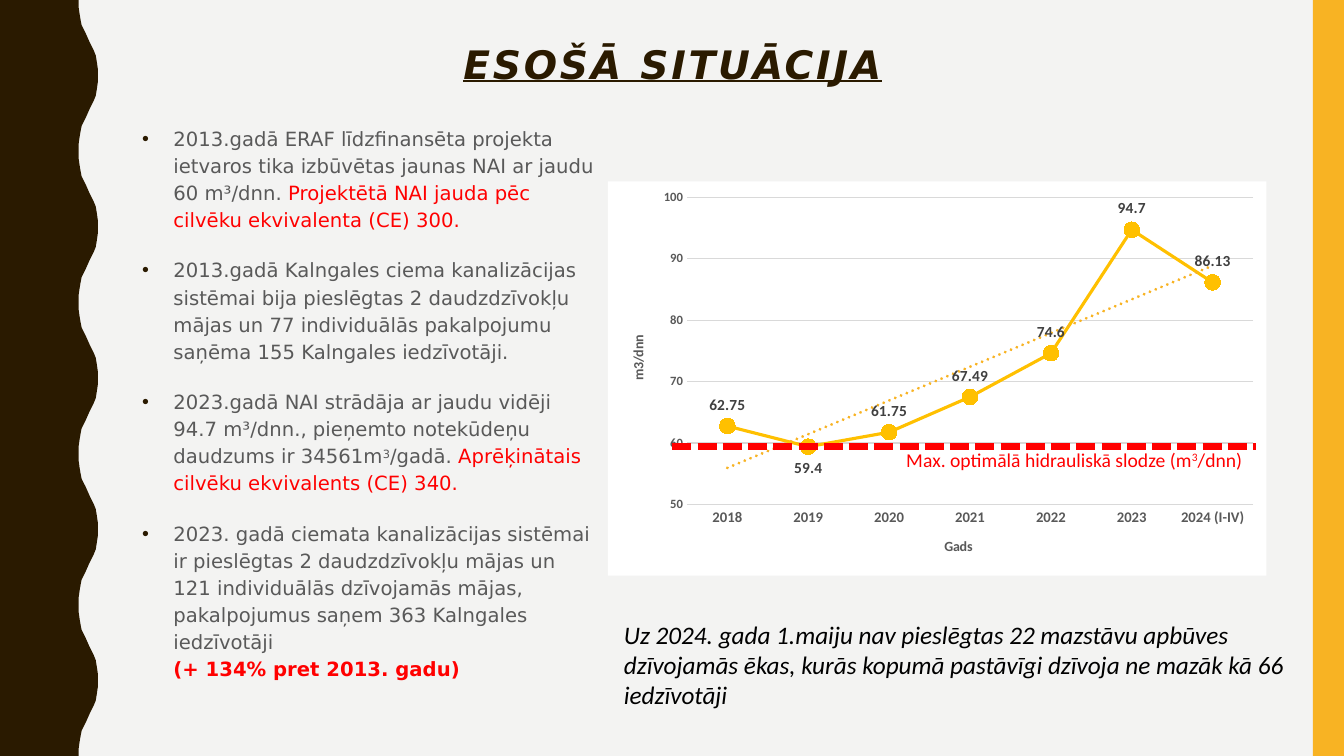
from dataclasses import dataclass

from lxml import etree
from pptx import Presentation
from pptx import util as u
from pptx.chart.data import CategoryChartData
from pptx.dml.color import RGBColor
from pptx.enum import chart as charts, dml, shapes, text
from pptx.oxml import parse_xml
from pptx.oxml.ns import nsdecls, qn

BROWN = RGBColor(0x2A, 0x1A, 0x00)
AMBER = RGBColor(0xF8, 0xB3, 0x23)
GOLD = RGBColor(0xFF, 0xC0, 0x00)
RED = RGBColor(0xFF, 0x00, 0x00)
GREY = RGBColor(0x59, 0x59, 0x59)
DARK = RGBColor(0x40, 0x40, 0x40)
PALE = RGBColor(0xD9, 0xD9, 0xD9)
PAPER = RGBColor(0xF3, 0xF3, 0xF2)
BLACK = RGBColor(0x00, 0x00, 0x00)

SANS = "DejaVu Sans"
CALIBRI = "Calibri"


@dataclass
class Span:
    words: str
    color: RGBColor = GREY
    bold: bool = False
    raised: bool = False
    new_line: bool = False


BULLETS = [
    [Span("2013.gadā ERAF līdzfinansēta projekta ietvaros tika izbūvētas jaunas NAI ar jaudu 60 m³/dnn. "),
     Span("Projektētā NAI jauda pēc cilvēku ekvivalenta (CE) 300.", RED)],
    [Span("2013.gadā Kalngales ciema kanalizācijas sistēmai bija pieslēgtas 2 daudzdzīvokļu mājas "
          "un 77 individuālās pakalpojumu saņēma 155 Kalngales iedzīvotāji.")],
    [Span("2023.gadā NAI strādāja ar jaudu vidēji 94.7 m³/dnn., pieņemto notekūdeņu daudzums ir 34561m"),
     Span("3", raised=True), Span("/gadā. "),
     Span("Aprēķinātais cilvēku ekvivalents (CE) 340.", RED)],
    [Span("2023. gadā ciemata kanalizācijas sistēmai ir pieslēgtas 2 daudzdzīvokļu mājas un "
          "121 individuālās dzīvojamās mājas, pakalpojumus saņem 363 Kalngales iedzīvotāji "),
     Span("(+ 134% pret 2013. gadu)", RED, bold=True, new_line=True)],
]
LIMIT_LABEL = [Span("Max. optimālā hidrauliskā slodze (m", RED), Span("3", RED, raised=True), Span("/dnn)", RED)]
FOOTNOTE = [Span("Uz 2024. gada 1.maiju nav pieslēgtas 22 mazstāvu apbūves dzīvojamās ēkas, "
                 "kurās kopumā pastāvīgi dzīvoja ne mazāk kā 66 iedzīvotāji", BLACK)]

FLOW = {"2018": 62.75, "2019": 59.4, "2020": 61.75, "2021": 67.49,
        "2022": 74.6, "2023": 94.7, "2024 (I-IV)": 86.13}

# Half a wave of the left edge, as (x, y); the other half mirrors it
WAVE_PERIOD, WAVE_COUNT = 1.5, 5
HALF_WAVE = [(0.78, 0), (0.78, 0.07), (0.79, 0.14), (0.8, 0.2), (0.81, 0.25), (0.85, 0.33), (0.89, 0.42),
             (0.93, 0.5), (0.95, 0.55), (0.96, 0.61), (0.97, 0.68), (0.97, 0.75)]


def place(box, left: float, top: float, width: float, height: float) -> None:
    box.left, box.top = u.Inches(left), u.Inches(top)
    box.width, box.height = u.Inches(width), u.Inches(height)


def write(para, spans: list[Span], name: str, size: float, italic: bool = False) -> None:
    para.font.name, para.font.size, para.font.italic = name, u.Pt(size), italic
    for span in spans:
        if span.new_line:
            para.add_line_break()
        run = para.add_run()
        run.text = span.words
        run.font.color.rgb = span.color
        if span.bold:
            run.font.bold = True
        if span.raised:
            run.font._element.set("baseline", "30000")


def add_bullet(para) -> None:
    props = para._p.get_or_add_pPr()
    props.set("marL", str(u.Inches(0.56)))
    props.set("indent", str(u.Inches(-0.31)))
    color = parse_xml(f'<a:buClr {nsdecls("a")}><a:srgbClr val="{BROWN}"/></a:buClr>')
    mark = parse_xml(f'<a:buChar {nsdecls("a")} char="•"/>')
    default_font = props.find(qn("a:defRPr"))
    default_font.addprevious(color)
    default_font.addprevious(mark)


def add_text(page, spans: list[Span], size: float, area: tuple, italic: bool = False) -> None:
    box = page.shapes.add_textbox(*(u.Inches(length) for length in area))
    box.text_frame.word_wrap = True
    write(box.text_frame.paragraphs[0], spans, CALIBRI, size, italic)


def send_back(page, shape, color: RGBColor) -> None:
    shape.shadow.inherit = False
    shape.fill.solid()
    shape.fill.fore_color.rgb = color
    shape.line.fill.background()
    page.shapes._spTree.insert(2, shape._element)


def style_font(font, size: float, color: RGBColor) -> None:
    font.name, font.size, font.bold = CALIBRI, u.Pt(size), True
    font.color.rgb = color


def style_axis(axis, title: str, size: float) -> None:
    axis.major_tick_mark = axis.minor_tick_mark = charts.XL_TICK_MARK.NONE
    style_font(axis.tick_labels.font, size, GREY)
    para = axis.axis_title.text_frame.paragraphs[0]
    para.text = title
    style_font(para.runs[0].font, 10, GREY)


def add_flow_chart(page) -> None:
    data = CategoryChartData()
    data.categories = list(FLOW)
    data.add_series("Series 1", list(FLOW.values()))
    area = [u.Inches(length) for length in (6.03, 1.8, 6.53, 3.91)]
    chart = page.shapes.add_chart(charts.XL_CHART_TYPE.LINE_MARKERS, *area, data).chart
    chart.has_legend = chart.has_title = False
    chart.font.name, chart.font.size = CALIBRI, u.Pt(10)

    # Axes
    years, volumes = chart.category_axis, chart.value_axis
    style_axis(years, "Gads", 10.5)
    style_axis(volumes, "m3/dnn", 9)
    volumes.minimum_scale, volumes.maximum_scale, volumes.major_unit = 50, 100, 10
    volumes.format.line.fill.background()
    for line in (years.format.line, volumes.major_gridlines.format.line):
        line.color.rgb, line.width = PALE, u.Pt(0.75)

    # Series, markers and labels
    plot = chart.plots[0]
    plot.vary_by_categories = False
    series = plot.series[0]
    series.smooth = False
    series.format.line.color.rgb, series.format.line.width = GOLD, u.Pt(2.25)
    marker = series.marker
    marker.style, marker.size = charts.XL_MARKER_STYLE.CIRCLE, 11
    marker.format.fill.solid()
    marker.format.fill.fore_color.rgb = marker.format.line.color.rgb = GOLD
    labels = series.data_labels
    labels.show_value, labels.position = True, charts.XL_LABEL_POSITION.ABOVE
    style_font(labels.font, 11, DARK)
    lowest = series.points[1].data_label
    style_font(lowest.font, 11, DARK)
    lowest.position = charts.XL_LABEL_POSITION.BELOW

    # Trend line, plot area and white background
    series._element.find(qn("c:cat")).addprevious(parse_xml(
        f'<c:trendline {nsdecls("c", "a")}><c:spPr><a:ln w="{u.Pt(2.25)}" cap="rnd"><a:solidFill>'
        f'<a:srgbClr val="{AMBER}"/></a:solidFill><a:prstDash val="sysDot"/></a:ln></c:spPr>'
        '<c:trendlineType val="linear"/><c:dispRSqr val="0"/><c:dispEq val="0"/></c:trendline>'))
    plot_area = chart._chartSpace.chart.plotArea
    for old in plot_area.findall(qn("c:layout")):
        plot_area.remove(old)
    layout = parse_xml(f'<c:layout {nsdecls("c")}><c:manualLayout><c:layoutTarget val="inner"/>'
                       '<c:xMode val="edge"/><c:yMode val="edge"/></c:manualLayout></c:layout>')
    for side, share in {"x": 0.12, "y": 0.04, "w": 0.86, "h": 0.78}.items():
        etree.SubElement(layout[0], qn(f"c:{side}")).set("val", str(share))
    plot_area.insert(0, layout)
    chart._chartSpace.chart.addnext(parse_xml(
        f'<c:spPr {nsdecls("c", "a")}><a:solidFill><a:srgbClr val="FFFFFF"/></a:solidFill>'
        '<a:ln><a:noFill/></a:ln></c:spPr>'))


def main() -> None:
    deck = Presentation()
    deck.slide_width, deck.slide_height = u.Inches(13.33), u.Inches(7.5)
    page = deck.slides.add_slide(deck.slide_layouts[1])
    page.background.fill.solid()
    page.background.fill.fore_color.rgb = PAPER

    # Side bands
    stripe = page.shapes.add_shape(shapes.MSO_SHAPE.RECTANGLE, u.Inches(13.02), 0, u.Inches(0.31), u.Inches(7.5))
    send_back(page, stripe, AMBER)
    wave = HALF_WAVE + [(x, WAVE_PERIOD - y) for x, y in HALF_WAVE[-2::-1]]
    edge = [(u.Inches(x), u.Inches(y + turn * WAVE_PERIOD)) for turn in range(WAVE_COUNT) for x, y in wave]
    outline = page.shapes.build_freeform(0, 0)
    outline.add_line_segments(edge + [(0, u.Inches(7.5))], close=True)
    send_back(page, outline.convert_to_shape(), BROWN)

    # Title
    title = page.shapes.title
    place(title, 0.92, 0.4, 11.5, 0.41)
    title.text_frame.auto_size = text.MSO_AUTO_SIZE.NONE
    title.text_frame.vertical_anchor = text.MSO_ANCHOR.TOP
    para = title.text_frame.paragraphs[0]
    para.alignment, para.line_spacing = text.PP_ALIGN.CENTER, 0.9
    write(para, [Span("ESOŠĀ SITUĀCIJA", BROWN, bold=True)], SANS, 28, italic=True)
    para.runs[0].font.underline = True
    para.runs[0].font._element.set("spc", "200")

    # Bulleted list
    body = page.placeholders[1]
    place(body, 1.06, 1.17, 4.97, 6.33)
    frame = body.text_frame
    frame.auto_size = text.MSO_AUTO_SIZE.NONE
    for number, spans in enumerate(BULLETS):
        para = frame.add_paragraph() if number else frame.paragraphs[0]
        para.line_spacing, para.space_before, para.space_after = 1.15, u.Pt(7), u.Pt(10)
        write(para, spans, SANS, 14)
        add_bullet(para)

    # Footnote, chart and load limit
    add_text(page, FOOTNOTE, 18, (6.09, 6.09, 6.76, 1.01), italic=True)
    add_flow_chart(page)
    limit = page.shapes.add_connector(shapes.MSO_CONNECTOR.STRAIGHT, *(
        u.Inches(length) for length in (6.67, 4.43, 12.46, 4.43)))
    limit.line.color.rgb, limit.line.width = RED, u.Pt(4.5)
    limit.line.dash_style = dml.MSO_LINE.SQUARE_DOT
    etree.SubElement(limit._element.spPr, qn("a:effectLst"))
    add_text(page, LIMIT_LABEL, 14, (8.89, 4.39, 3.53, 0.34))

    deck.save("out.pptx")


if __name__ == "__main__":
    main()
